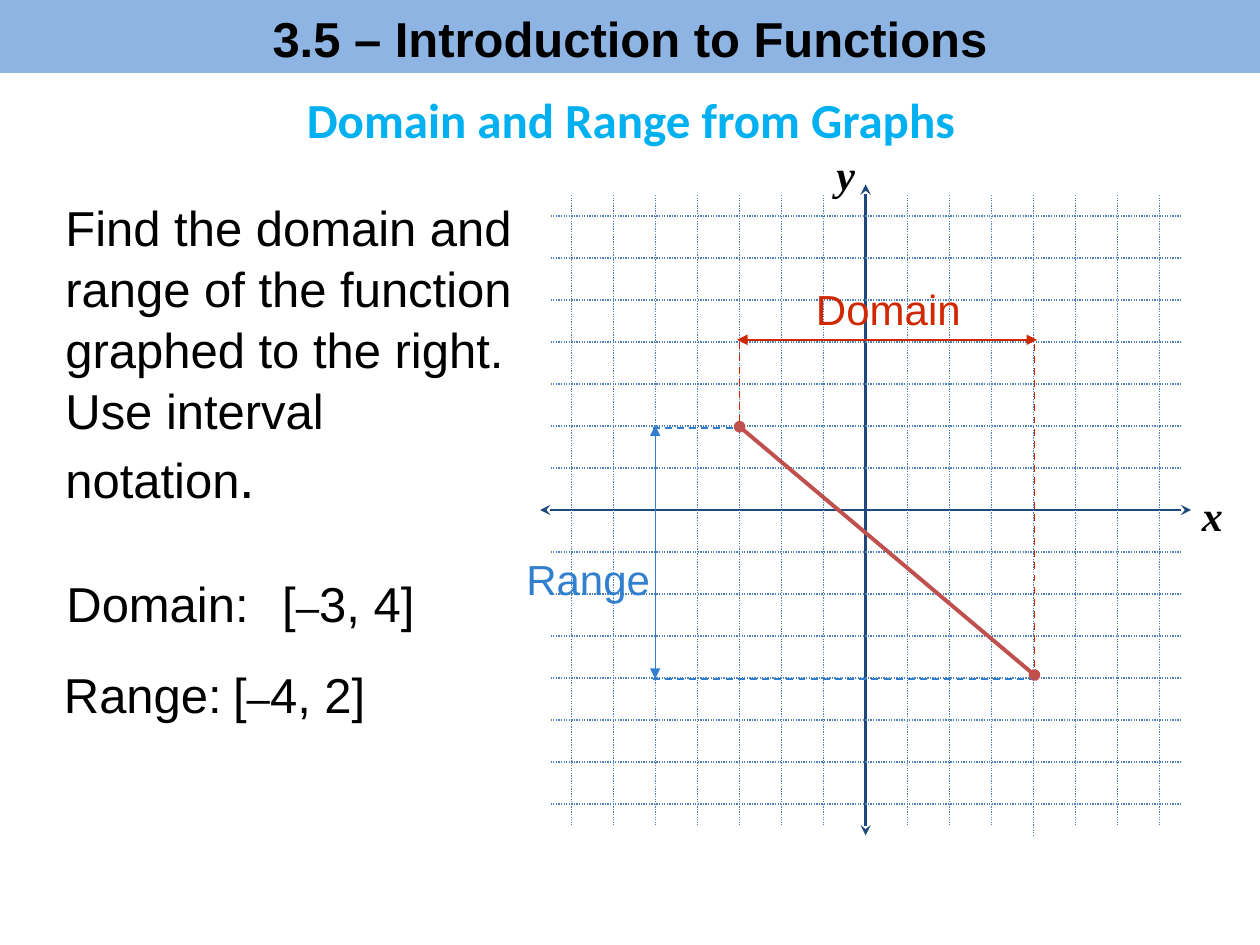
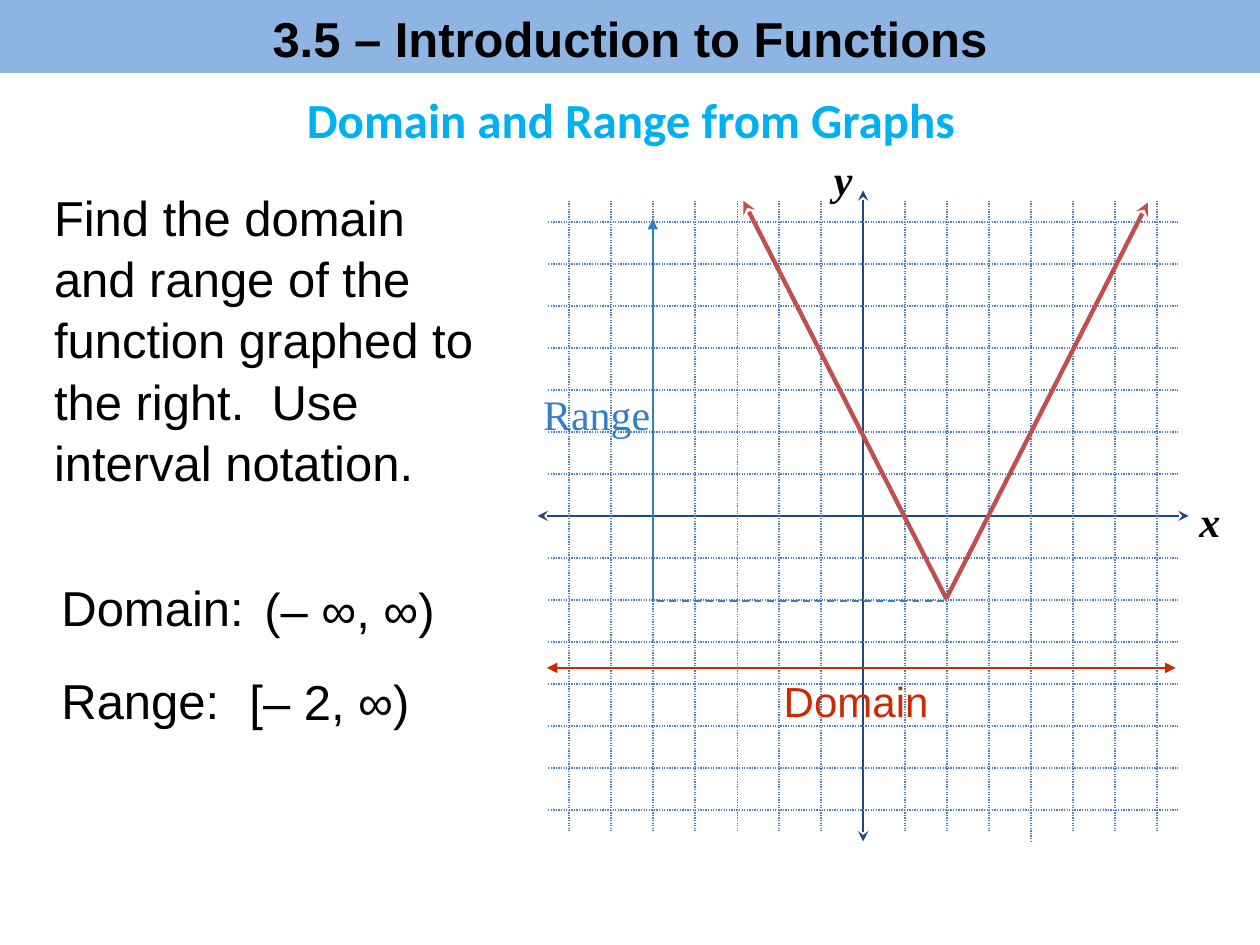
from lxml.etree import SubElement
from pptx import Presentation
from pptx.dml.color import RGBColor
from pptx.enum.dml import MSO_LINE_DASH_STYLE as Dash
from pptx.enum.shapes import MSO_CONNECTOR as Connector
from pptx.enum.text import MSO_ANCHOR as Anchor, PP_ALIGN as Align
from pptx.oxml.ns import qn
from pptx.util import Cm, Pt

COLORS = {
    "band": "8EB4E3",
    "subtitle": "00B0F0",
    "text": "000000",
    "axis": "1F497D",
    "grid": "4F81BD",
    "curve": "C0504D",
    "domain": "D02800",
    "range": "317FCD",
}
TITLE = "3.5 – Introduction to Functions"
SUBTITLE = "Domain and Range from Graphs"
QUESTION = "Find the domain and range of the function graphed to the right.  Use interval notation"
UNIT = 2.54 / 3     # one grid square, in cm
GRID_REACH = 7.5    # grid and axis half-lengths, in squares
AXIS_REACH = 7.75
ARIAL_SPACING = 1.04


def color(name):
    return RGBColor.from_string(COLORS[name])


def add_runs(para, runs, color_name="text", font="Arial", bold=False, italic=False):
    """Append (text, size) runs that share one style."""
    if font == "Arial":
        para.line_spacing = ARIAL_SPACING
    for text, size in runs:
        span = para.add_run()
        span.text = text
        span.font.size = Pt(size)
        span.font.name = font
        span.font.bold = bold
        span.font.italic = italic
        span.font.color.rgb = color(color_name)


def add_text(shapes, box, runs, align=Align.LEFT, wrap=True, **style):
    frame = shapes.add_textbox(*map(Cm, box)).text_frame
    frame.word_wrap = wrap
    para = frame.paragraphs[0]
    para.alignment = align
    add_runs(para, runs, **style)


def add_line(shapes, ends, color_name, width, dash=None, head=None, tail=None):
    """Draw a line between two (x, y) points in cm."""
    start, end = ends
    line = shapes.add_connector(Connector.STRAIGHT, *map(Cm, (*start, *end)))
    line.line.color.rgb = color(color_name)
    line.line.width = Pt(width)
    if dash:
        line.line.dash_style = dash
    properties = line._element.spPr
    outline = properties.find(qn("a:ln"))
    for tag, arrow in (("a:headEnd", head), ("a:tailEnd", tail)):
        if arrow:
            SubElement(outline, qn(tag), type=arrow)
    SubElement(properties, qn("a:effectLst"))


def add_heading(page):
    title = page.shapes.title
    title.left, title.top, title.width, title.height = map(Cm, (0, 0, 25.4, 1.47))
    title.fill.solid()
    title.fill.fore_color.rgb = color("band")
    frame = title.text_frame
    frame.vertical_anchor = Anchor.MIDDLE
    para = frame.paragraphs[0]
    para.alignment = Align.CENTER
    add_runs(para, [(TITLE, 28)], bold=True)
    add_text(page.shapes, (0.03, 1.68, 25.37, 1.45), [(SUBTITLE, 28)],
             align=Align.CENTER, color_name="subtitle", font="Calibri", bold=True)


def add_plane(page, center):
    """Draw the grid and axes; return the group and a squares-to-cm function."""
    shapes = page.shapes.add_group_shape().shapes
    left, top = center

    def place(*points):
        return [(left + x * UNIT, top - y * UNIT) for x, y in points]

    axis = dict(color_name="axis", width=1.5, head="stealth", tail="stealth")
    add_line(shapes, place((0, AXIS_REACH), (0, -AXIS_REACH)), **axis)
    add_line(shapes, place((-AXIS_REACH, 0), (AXIS_REACH, 0)), **axis)

    grid = dict(color_name="grid", width=0.75, dash=Dash.ROUND_DOT)
    for step in range(-7, 8):
        if step == 0:
            continue
        bottom = AXIS_REACH if step == 4 else GRID_REACH
        add_line(shapes, place((-GRID_REACH, step), (GRID_REACH, step)), **grid)
        add_line(shapes, place((step, GRID_REACH), (step, -bottom)), **grid)

    label = dict(wrap=False, font="Times New Roman", bold=True, italic=True)
    add_text(shapes, (left + 6.53, top - 0.53, 0.94, 1.27), [("x", 24)], **label)
    add_text(shapes, (left - 0.84, top - 7.42, 0.89, 1.27), [("y", 24)], **label)
    return shapes, place


def draw_segment(page, center):
    """Falling segment with closed ends, its domain above and range at left."""
    group, place = add_plane(page, center)
    first, last = (-3, 1.98), (4.02, -3.93)
    add_line(group, place(first, last), "curve", 2.25, head="oval", tail="oval")

    guides = [
        ("domain", (last[0], 3.96), (last[0], -3.75)),
        ("domain", (first[0], 3.99), (first[0], 2.07)),
        ("range", (-5.07, -4.02), (3.93, -4.02)),
        ("range", (-5.07, 1.95), (-3.09, 1.95)),
    ]
    for name, start, end in guides:
        add_line(page.shapes, place(start, end), name, 1, dash=Dash.DASH)
    both = dict(head="triangle", tail="triangle")
    add_line(page.shapes, place((-3.06, 4.05), (4.08, 4.05)), "domain", 1, **both)
    add_line(page.shapes, place((-5.01, 2.01), (-5.01, -4.02)), "range", 0.75, **both)

    left, top = center
    add_text(page.shapes, (left - 1.25, top - 4.72, 3.91, 1.3), [("Domain", 24)],
             color_name="domain")
    add_text(page.shapes, (left - 7.09, top + 0.72, 3.35, 1.3), [("Range", 24)],
             color_name="range")


def draw_vee(page, center):
    """V-shaped graph opening upward, its domain below and range at left."""
    group, place = add_plane(page, center)
    vertex = (1.98, -1.97)
    for tip in ((6.78, 7.46), (-2.85, 7.5)):
        add_line(group, place(vertex, tip), "curve", 2.5, tail="stealth")

    add_line(page.shapes, place((-7.53, -3.62), (7.44, -3.62)), "domain", 1,
             head="triangle", tail="triangle")
    add_line(page.shapes, place((1.92, -2.03), (-4.95, -2.03)), "range", 1, dash=Dash.DASH)
    add_line(page.shapes, place((-5.01, -2.03), (-5.01, 7.07)), "range", 1, tail="triangle")

    left, top = center
    add_text(page.shapes, (left - 1.85, top + 3.06, 3.73, 1.3), [("Domain", 24)],
             color_name="domain")
    add_text(page.shapes, (left - 6.7, top - 2.7, 2.82, 1.27), [("Range", 24)],
             color_name="range", font="Times New Roman")


def add_page(deck, texts, draw_graph, center):
    page = deck.slides.add_slide(deck.slide_layouts[5])
    add_heading(page)
    for box, runs in texts:
        add_text(page.shapes, box, runs)
    draw_graph(page, center)


def main():
    deck = Presentation()
    deck.slide_width, deck.slide_height = Cm(25.4), Cm(19.05)
    add_page(deck, [
        ((1.07, 3.81, 9.73, 6.4), [(QUESTION, 28), (".", 32)]),
        ((1.09, 11.38, 4.34, 1.45), [("Domain:", 28)]),
        ((5.44, 11.38, 3.28, 1.45), [("[", 28), ("–", 24), ("3, 4]", 28)]),
        ((1.04, 13.23, 4.04, 1.45), [("Range:", 28)]),
        ((4.45, 13.23, 3.81, 1.45), [("[", 28), ("–", 24), ("4, 2]", 28)]),
    ], draw_segment, (17.45, 10.28))
    add_page(deck, [
        ((0.84, 3.61, 9.42, 6.25), [(QUESTION + ".", 28)]),
        ((0.99, 11.48, 4.39, 1.45), [("Domain:", 28)]),
        ((5.08, 11.51, 4.24, 1.45), [("(– ∞, ∞)", 28)]),
        ((0.99, 13.34, 3.86, 1.45), [("Range:", 28)]),
        ((4.78, 13.36, 4.04, 1.45), [("[– 2, ∞)", 28)]),
    ], draw_vee, (17.4, 10.4))
    deck.save("out.pptx")


if __name__ == "__main__":
    main()
